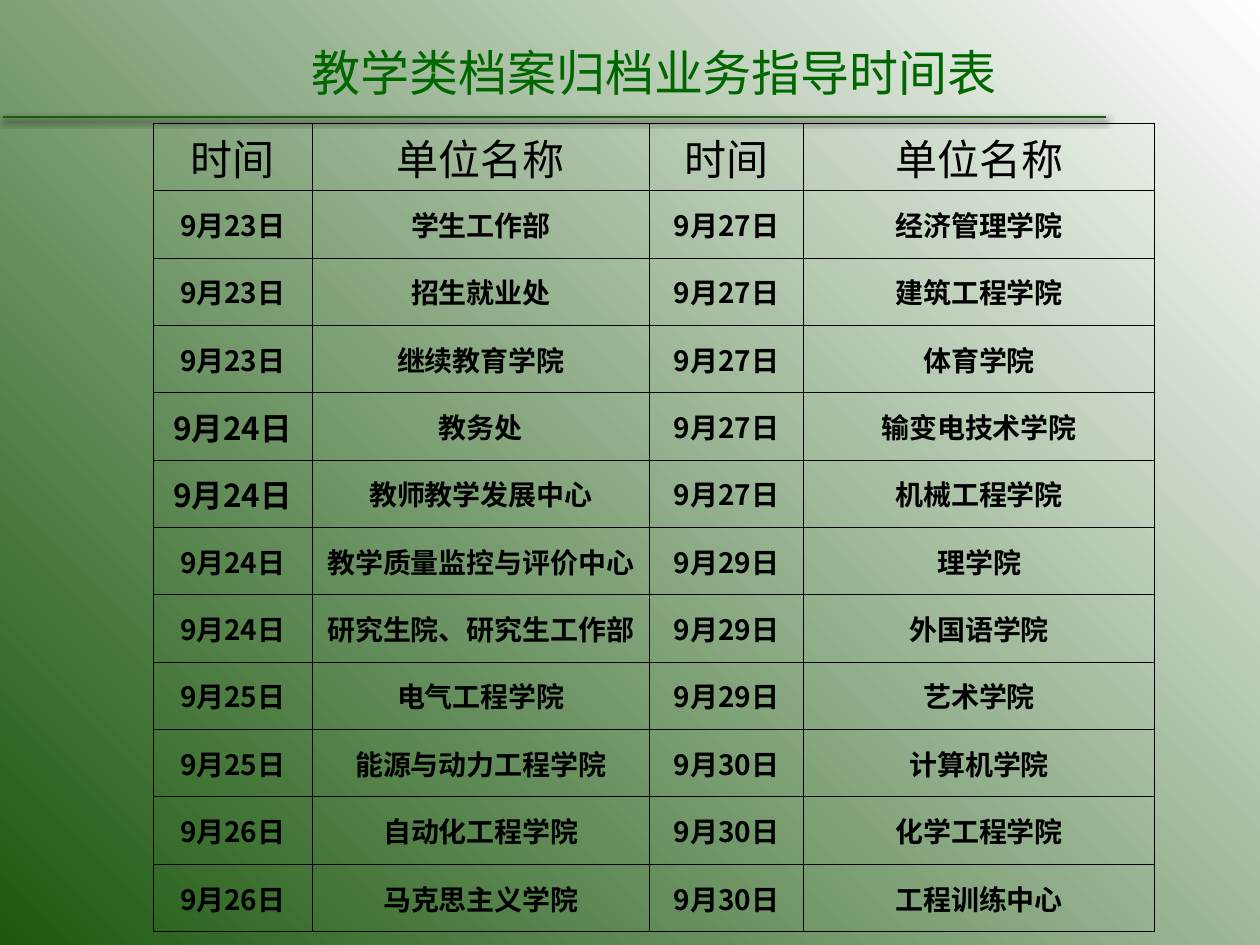
from lxml import etree
from pptx import Presentation
from pptx.dml.color import RGBColor
from pptx.enum.shapes import MSO_CONNECTOR
from pptx.enum.text import MSO_ANCHOR, PP_ALIGN
from pptx.oxml.ns import qn
from pptx.util import Pt

STRAIGHT = MSO_CONNECTOR.STRAIGHT
MIDDLE = MSO_ANCHOR.MIDDLE
CENTER = PP_ALIGN.CENTER

FONT = "Noto Sans CJK SC"
BLACK, GREEN, TITLE_GREEN, WHITE = "000000", "1D590F", "006600", "FFFFFF"

TITLE = "教学类档案归档业务指导时间表"
HEADER = ["时间", "单位名称"] * 2
SCHEDULE = [
    ("9月23日", "学生工作部", "9月27日", "经济管理学院"),
    ("9月23日", "招生就业处", "9月27日", "建筑工程学院"),
    ("9月23日", "继续教育学院", "9月27日", "体育学院"),
    ("9月24日", "教务处", "9月27日", "输变电技术学院"),
    ("9月24日", "教师教学发展中心", "9月27日", "机械工程学院"),
    ("9月24日", "教学质量监控与评价中心", "9月29日", "理学院"),
    ("9月24日", "研究生院、研究生工作部", "9月29日", "外国语学院"),
    ("9月25日", "电气工程学院", "9月29日", "艺术学院"),
    ("9月25日", "能源与动力工程学院", "9月30日", "计算机学院"),
    ("9月26日", "自动化工程学院", "9月30日", "化学工程学院"),
    ("9月26日", "马克思主义学院", "9月30日", "工程训练中心"),
]
LARGE_DATES = {(3, 0), (4, 0)}  # schedule cells set in a larger size
COL_SHARES = (1.26, 2.68, 1.22, 2.79)
TITLE_HEIGHT = 61


def rgb(color):
    return RGBColor.from_string(color)


def add_background(s):
    fill = s.background.fill
    fill.gradient()
    fill.gradient_angle = 45
    for stop, color in zip(fill.gradient_stops, (GREEN, WHITE)):
        stop.color.rgb = rgb(color)


def add_rule(s, left, top, width):
    line = s.shapes.add_connector(STRAIGHT, Pt(left), Pt(top), Pt(left + width), Pt(top))
    line.line.color.rgb = rgb(GREEN)
    line.line.width = Pt(1.25)
    # Soft shadow below the rule
    effects = etree.SubElement(line._element.spPr, qn("a:effectLst"))
    shadow = etree.SubElement(effects, qn("a:outerShdw"), blurRad=str(Pt(4)),
                              dist=str(Pt(2)), dir="5400000", rotWithShape="0")
    etree.SubElement(shadow, qn("a:srgbClr"), val=BLACK)


def set_borders(cell, sides):
    tcPr = cell._tc.get_or_add_tcPr()
    for i, side in enumerate("LRTB"):
        ln = etree.Element(qn(f"a:ln{side}"), w=str(Pt(0.5)))
        if side in sides:
            fill = etree.SubElement(ln, qn("a:solidFill"))
            etree.SubElement(fill, qn("a:srgbClr"), val=BLACK)
        else:
            etree.SubElement(ln, qn("a:noFill"))
        tcPr.insert(i, ln)


def format_cell(cell, sides="LRTB"):
    cell.fill.background()
    cell.vertical_anchor = MIDDLE
    cell.margin_left = cell.margin_right = cell.margin_top = cell.margin_bottom = 0
    set_borders(cell, sides)


def write_cell(cell, text, size, bold=False, color=BLACK):
    p = cell.text_frame.paragraphs[0]
    p.alignment = CENTER
    r = p.add_run()
    r.text = text
    r.font.size = Pt(size)
    r.font.bold = bold
    r.font.color.rgb = rgb(color)
    r.font.name = FONT
    etree.SubElement(r._r.get_or_add_rPr(), qn("a:ea"), typeface=FONT)


def add_schedule(s, left, top, width, height):
    n_rows, n_cols = len(SCHEDULE) + 2, len(COL_SHARES)
    table = s.shapes.add_table(n_rows, n_cols, Pt(left), Pt(top), Pt(width), Pt(height)).table
    table.first_row = table.horz_banding = False
    for col, share in zip(table.columns, COL_SHARES):
        col.width = Pt(width * share / sum(COL_SHARES))
    for i, row in enumerate(table.rows):
        row.height = Pt(TITLE_HEIGHT if i == 0 else (height - TITLE_HEIGHT) / (n_rows - 1))

    # Title row, spanning all columns
    for c in range(n_cols):
        format_cell(table.cell(0, c), "B")
    table.cell(0, 0).merge(table.cell(0, n_cols - 1))
    write_cell(table.cell(0, 0), TITLE, 28, color=TITLE_GREEN)

    # Column headings
    for c, text in enumerate(HEADER):
        format_cell(table.cell(1, c))
        write_cell(table.cell(1, c), text, 24)

    # Dates and units
    for i, entry in enumerate(SCHEDULE):
        for c, text in enumerate(entry):
            cell = table.cell(i + 2, c)
            format_cell(cell)
            write_cell(cell, text, 18 if (i, c) in LARGE_DATES else 16, bold=True)


def main():
    prs = Presentation()
    prs.slide_width, prs.slide_height = Pt(720), Pt(540)
    s = prs.slides.add_slide(prs.slide_layouts[6])
    add_background(s)
    add_rule(s, 1.5, 66.7, 630.5)
    add_schedule(s, 87.6, 9.4, 572.4, 523.2)
    prs.save("out.pptx")


if __name__ == "__main__":
    main()
